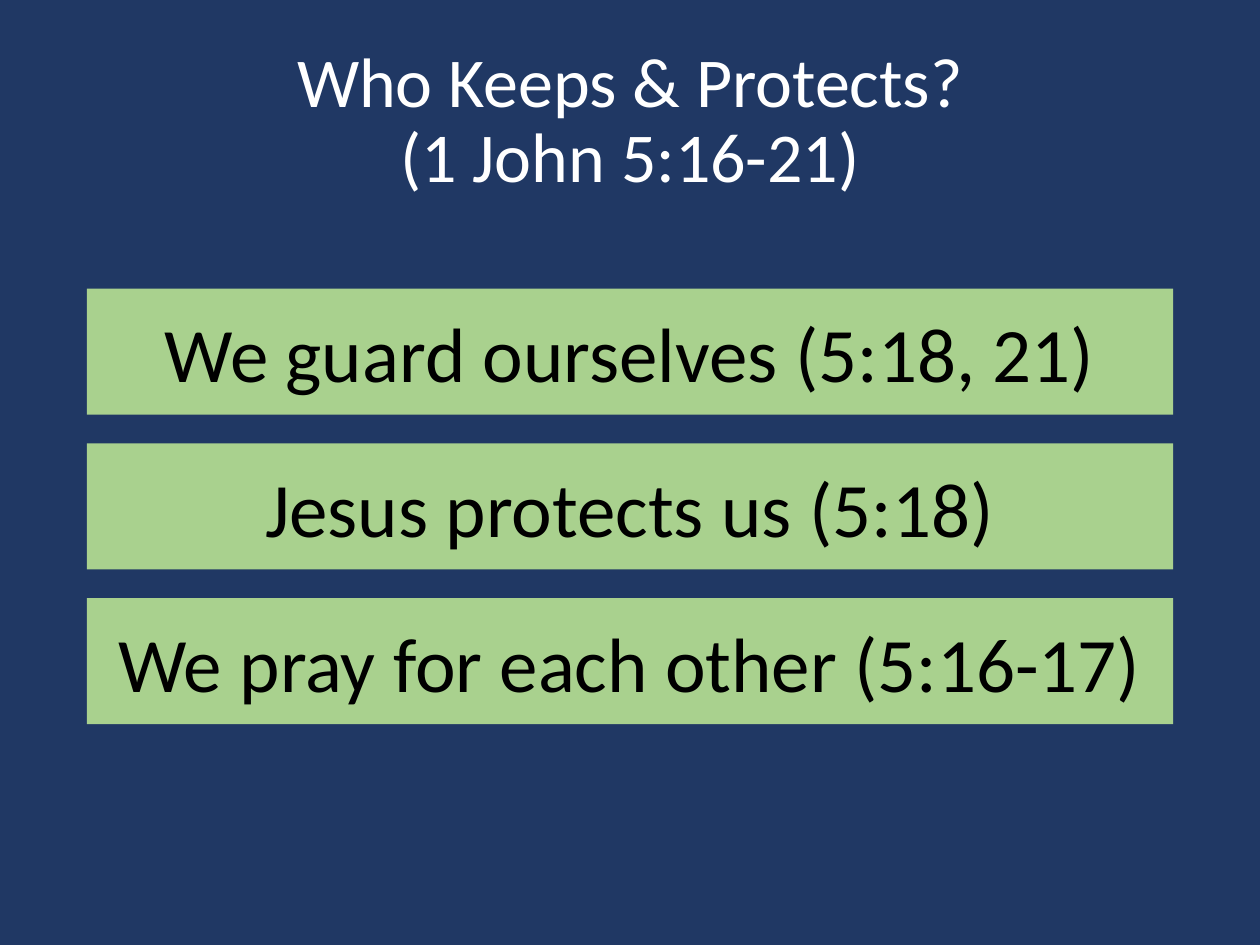
from dataclasses import dataclass

from pptx import Presentation
from pptx.dml.color import RGBColor
from pptx.enum.shapes import MSO_SHAPE
from pptx.enum.text import MSO_ANCHOR, MSO_AUTO_SIZE, PP_ALIGN
from pptx.slide import Slide
from pptx.text.text import TextFrame, _Paragraph
from pptx.util import Cm, Length, Pt


@dataclass(frozen=True)
class Theme:
    font: str = "Calibri"
    background: RGBColor = RGBColor(0x20, 0x38, 0x64)
    bar: RGBColor = RGBColor(0xA9, 0xD1, 0x8E)
    heading: RGBColor = RGBColor(0xFF, 0xFF, 0xFF)
    answer: RGBColor = RGBColor(0x00, 0x00, 0x00)
    heading_size: Length = Pt(40)
    answer_size: Length = Pt(44)


@dataclass(frozen=True)
class Answer:
    claim: str
    top: Length


THEME = Theme()
LEFT, WIDTH = Cm(1.75), Cm(21.9)
FIRST_TOP, BAR_HEIGHT, BAR_PITCH = Cm(5.82), Cm(2.54), Cm(3.12)

CLAIMS = (
    "We guard ourselves (5:18, 21)",
    "Jesus protects us (5:18)",
    "We pray for each other (5:16-17)",
)
ANSWERS = [Answer(claim, FIRST_TOP + i * BAR_PITCH) for i, claim in enumerate(CLAIMS)]


def center(frame: TextFrame) -> _Paragraph:
    frame.word_wrap = True
    frame.vertical_anchor = MSO_ANCHOR.MIDDLE
    paragraph = frame.paragraphs[0]
    paragraph.alignment = PP_ALIGN.CENTER
    return paragraph


def add_words(paragraph: _Paragraph, words: str, size: Length, color: RGBColor) -> None:
    run = paragraph.add_run()
    run.text = words
    run.font.name = THEME.font
    run.font.size = size
    run.font.color.rgb = color


def add_heading(slide: Slide, question: str, passage: str) -> None:
    heading = slide.shapes.add_textbox(LEFT, Cm(0.58), WIDTH, Cm(3.78))
    paragraph = center(heading.text_frame)
    paragraph.line_spacing = 0.9
    add_words(paragraph, question, THEME.heading_size, THEME.heading)
    paragraph.add_line_break()
    add_words(paragraph, passage, THEME.heading_size, THEME.heading)


def add_answer(slide: Slide, answer: Answer) -> None:
    bar = slide.shapes.add_shape(MSO_SHAPE.RECTANGLE, LEFT, answer.top, WIDTH, BAR_HEIGHT)
    bar.shadow.inherit = False
    bar.fill.solid()
    bar.fill.fore_color.rgb = THEME.bar
    bar.line.fill.background()
    bar.text_frame.auto_size = MSO_AUTO_SIZE.SHAPE_TO_FIT_TEXT
    paragraph = center(bar.text_frame)
    paragraph.space_after = Pt(6)
    add_words(paragraph, answer.claim, THEME.answer_size, THEME.answer)


def main() -> None:
    deck = Presentation()
    deck.slide_width, deck.slide_height = Cm(25.4), Cm(19.05)
    slide = deck.slides.add_slide(deck.slide_layouts[6])
    slide.background.fill.solid()
    slide.background.fill.fore_color.rgb = THEME.background
    for answer in ANSWERS:
        add_answer(slide, answer)
    add_heading(slide, "Who Keeps & Protects?", "(1 John 5:16-21)")
    deck.save("out.pptx")


if __name__ == "__main__":
    main()
